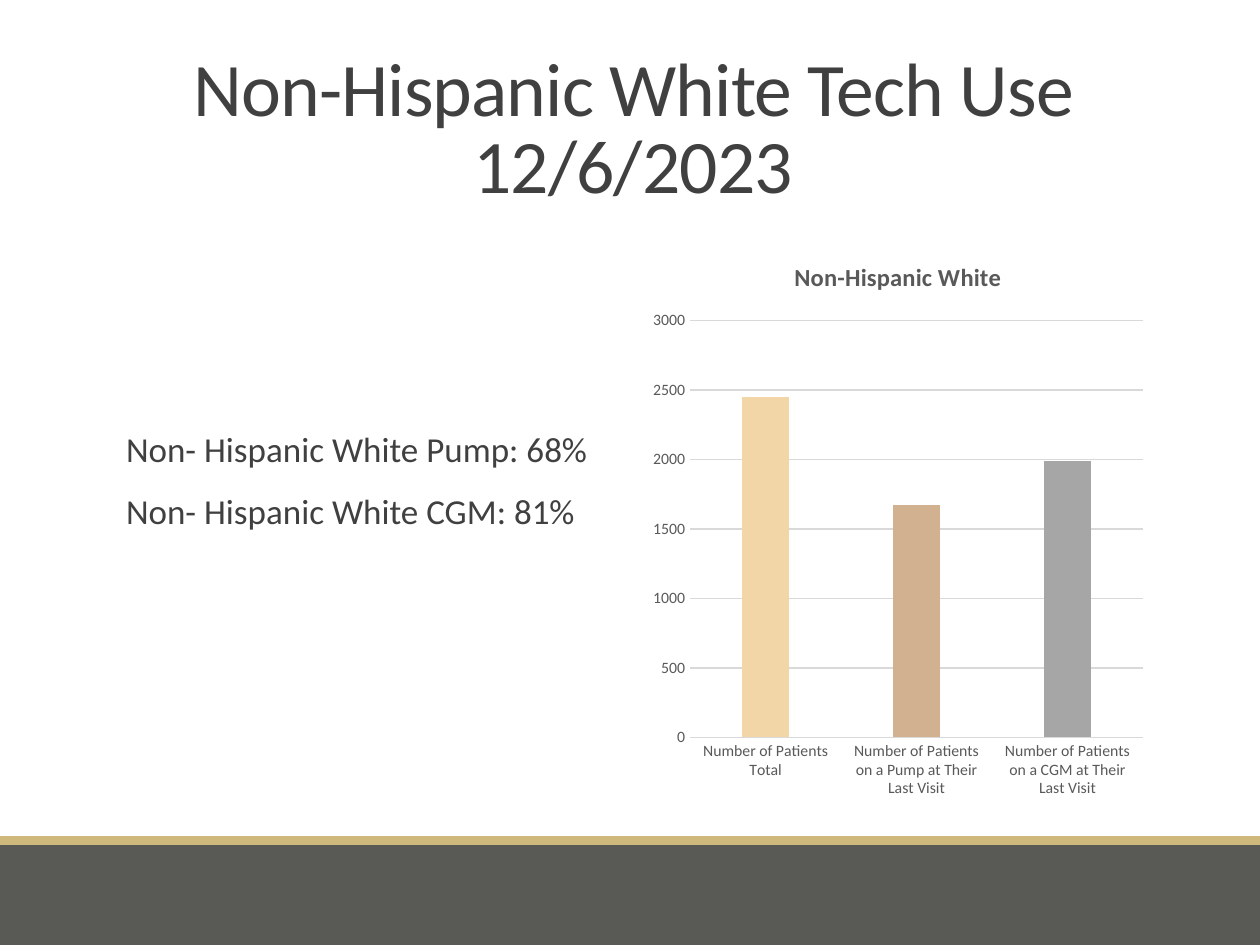
import pptx
import pptx.util
import pptx.chart.data
import pptx.dml.color
import pptx.enum.chart
import pptx.enum.shapes
import pptx.enum.text
import pptx.oxml.ns

RGBColor = pptx.dml.color.RGBColor
Pt = pptx.util.Pt

EMU_PER_PX = 914400 / 126
FONT = "Calibri"

WHITE = RGBColor(0xFF, 0xFF, 0xFF)
SLATE = RGBColor(0x59, 0x59, 0x55)
GOLD = RGBColor(0xCF, 0xB8, 0x7C)
TEXT = RGBColor(0x40, 0x40, 0x40)
CHART_TEXT = RGBColor(0x59, 0x59, 0x59)
GRID = RGBColor(0xD9, 0xD9, 0xD9)
SERIES = RGBColor(0xC9, 0x84, 0xF0)
BAR_COLORS = [
    RGBColor(0xF3, 0xD6, 0xA8),
    RGBColor(0xD2, 0xB1, 0x91),
    RGBColor(0xA6, 0xA6, 0xA6),
]

CATEGORIES = [
    "Number of Patients Total",
    "Number of Patients on a Pump at Their Last Visit",
    "Number of Patients on a CGM at Their Last Visit",
]
PATIENTS = [2450, 1670, 1990]


def px(n):
    return pptx.util.Emu(round(n * EMU_PER_PX))


def set_font(font, size, color, bold=False):
    font.name = FONT
    font.size = Pt(size)
    font.bold = bold
    font.color.rgb = color


def add_band(slide, top, height, color):
    sp = slide.shapes.add_shape(
        pptx.enum.shapes.MSO_SHAPE.RECTANGLE, 0, px(top), px(1260), px(height))
    sp.shadow.inherit = False
    sp.fill.solid()
    sp.fill.fore_color.rgb = color
    sp.line.fill.background()


def add_text_box(slide, left, top, width, height):
    tf = slide.shapes.add_textbox(px(left), px(top), px(width), px(height)).text_frame
    tf.word_wrap = True
    return tf


def add_title(slide, text):
    tf = add_text_box(slide, 113, 39, 1040, 176)
    tf.vertical_anchor = pptx.enum.text.MSO_ANCHOR.BOTTOM
    p = tf.paragraphs[0]
    p.text = text
    p.alignment = pptx.enum.text.PP_ALIGN.CENTER
    p.line_spacing = 0.85
    r = p.runs[0]
    set_font(r.font, 43.2, TEXT)
    r.font._element.set("spc", "-50")


def add_body(slide, lines):
    tf = add_text_box(slide, 113, 237, 510, 572)
    tf.margin_left = px(13)
    tf.margin_right = 0
    tf.margin_top = px(195)
    tf.text = "\n".join(lines)
    for i, p in enumerate(tf.paragraphs):
        p.line_spacing = 0.9
        p.space_before = Pt(12 if i else 0)
        p.space_after = Pt(2)
        set_font(p.runs[0].font, 20, TEXT)


def style_axis(axis):
    axis.major_tick_mark = axis.minor_tick_mark = pptx.enum.chart.XL_TICK_MARK.NONE
    set_font(axis.tick_labels.font, 9, CHART_TEXT)


def style_line(line):
    line.color.rgb = GRID
    line.width = Pt(0.75)


def add_column_chart(slide, title):
    data = pptx.chart.data.CategoryChartData()
    data.categories = CATEGORIES
    data.add_series(title, PATIENTS)
    chart = slide.shapes.add_chart(
        pptx.enum.chart.XL_CHART_TYPE.COLUMN_CLUSTERED,
        px(643), px(237), px(510), px(572), data).chart
    set_font(chart.font, 10, CHART_TEXT)
    chart.has_legend = False

    # Chart title
    chart.has_title = True
    tf = chart.chart_title.text_frame
    tf.text = title
    set_font(tf.paragraphs[0].runs[0].font, 14, CHART_TEXT, bold=True)
    chart.chart_title.include_in_layout = False

    # Axes
    style_axis(chart.category_axis)
    style_line(chart.category_axis.format.line)
    value_axis = chart.value_axis
    style_axis(value_axis)
    value_axis.minimum_scale = 0
    value_axis.maximum_scale = 3000
    value_axis.major_unit = 500
    value_axis.format.line.fill.background()
    value_axis.has_major_gridlines = True
    style_line(value_axis.major_gridlines.format.line)

    # Columns
    plot = chart.plots[0]
    plot.vary_by_categories = False
    plot.gap_width = 219
    plot.overlap = -27
    series = plot.series[0]
    series.format.fill.solid()
    series.format.fill.fore_color.rgb = SERIES
    for i, color in enumerate(BAR_COLORS):
        fill = series.points[i].format.fill
        fill.solid()
        fill.fore_color.rgb = color


def main():
    prs = pptx.Presentation()
    prs.slide_width = px(1260)
    prs.slide_height = px(945)
    slide = prs.slides.add_slide(prs.slide_layouts[6])
    slide.background.fill.solid()
    slide.background.fill.fore_color.rgb = WHITE

    # Footer bands
    add_band(slide, 845, 100, SLATE)
    add_band(slide, 836, 9, GOLD)

    # Content
    add_title(slide, "Non-Hispanic White Tech Use 12/6/2023")
    add_body(slide, ["Non- Hispanic White Pump: 68%", "Non- Hispanic White CGM: 81%"])
    add_column_chart(slide, "Non-Hispanic White")

    prs.save("out.pptx")


if __name__ == "__main__":
    main()
